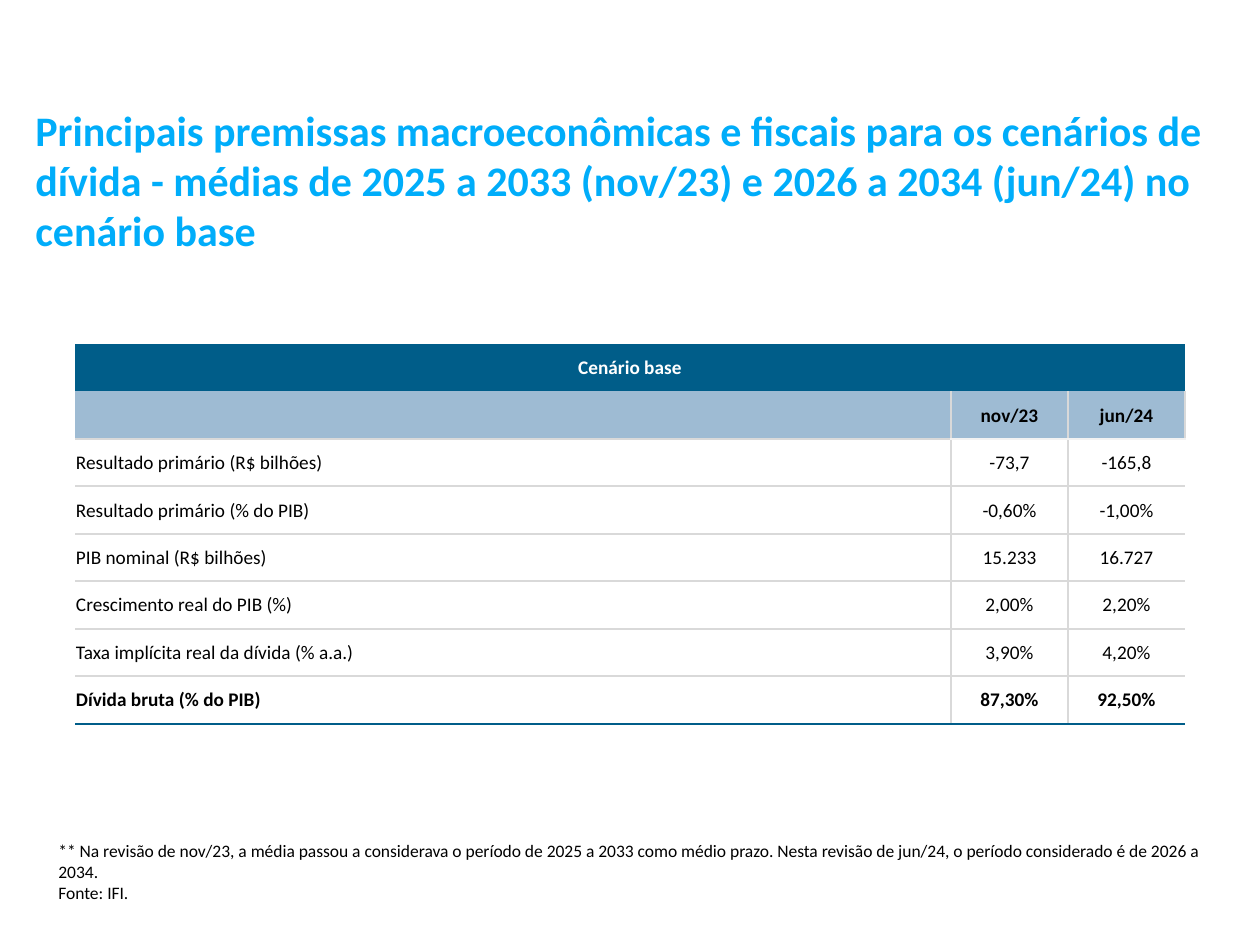
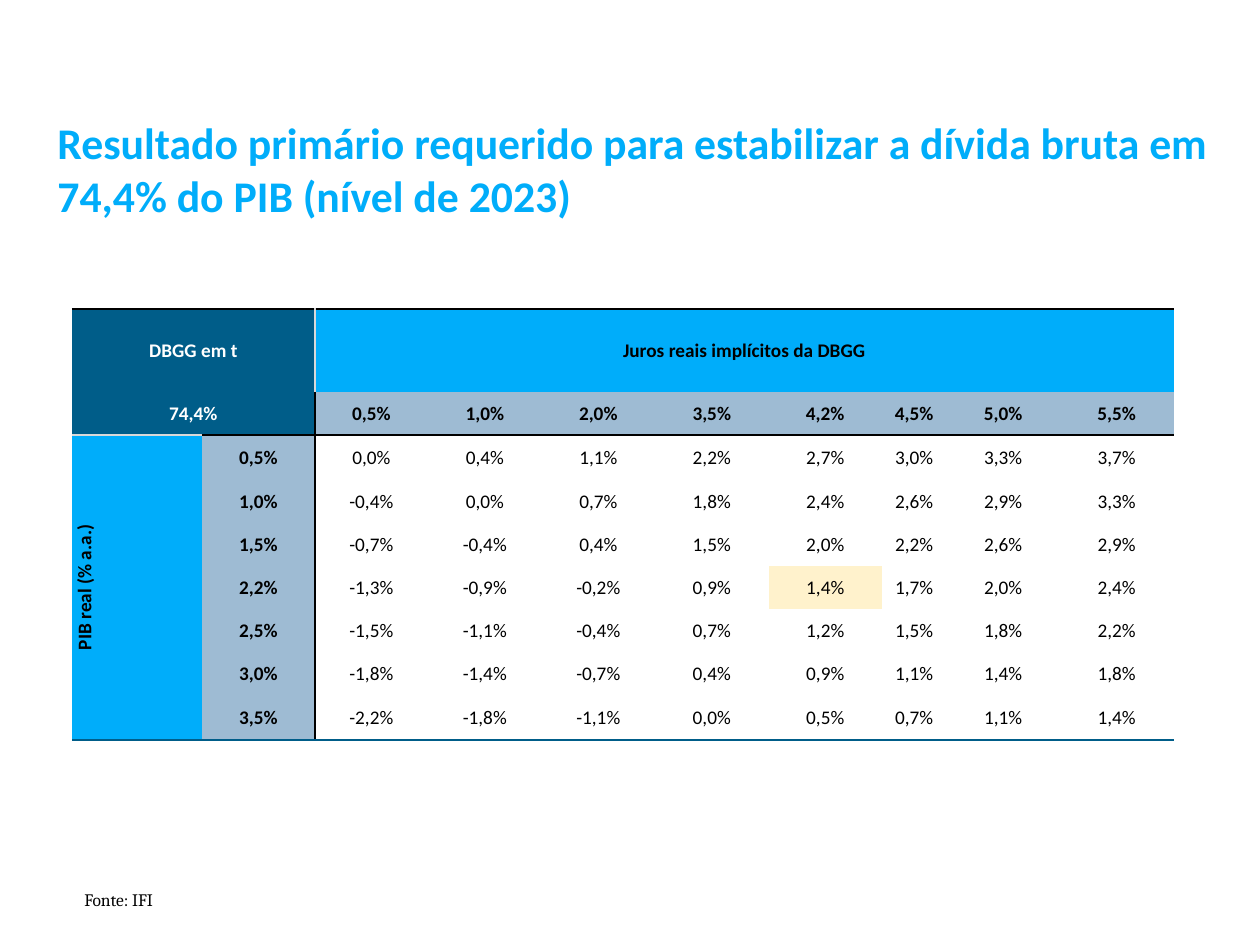
from dataclasses import dataclass
from typing import Callable, NamedTuple, Optional

from lxml.etree import SubElement
from pptx import Presentation
from pptx.dml.color import RGBColor
from pptx.enum.text import MSO_ANCHOR as Anchor, MSO_AUTO_SIZE as AutoSize, PP_ALIGN as Align
from pptx.oxml.ns import qn
from pptx.util import Emu, Pt

PX = 914400 / 126
NO_STYLE = "{2D5ABB26-0587-4C30-8999-92F81FD0307C}"
COLORS = {
    "sky": "00ADFA",
    "navy": "005D89",
    "pale": "9EBBD3",
    "cream": "FFF2CC",
    "gray": "D9D9D9",
    "mist": "F2F2F2",
    "black": "000000",
    "white": "FFFFFF",
}


class Edge(NamedTuple):
    color: str
    points: float = 1


class CellLook(NamedTuple):
    fill: Optional[str]
    bold: bool
    align: Align
    edges: dict[str, Edge]


class Merge(NamedTuple):
    row: int
    column: int
    last_row: int
    last_column: int


@dataclass
class TextBlock:
    left: int
    top: int
    width: int
    height: int
    lines: list[str]
    size: int = 10
    font: str = "Calibri"
    color: str = "black"
    bold: bool = False


@dataclass
class Grid:
    left: int
    top: int
    columns: list[int]
    rows: list[int]
    texts: list[list[str]]
    merges: list[Merge]
    look: Callable[[int, int], CellLook]
    vertical: Optional[tuple[int, int]] = None


GRAY = Edge("gray")
MIST = Edge("mist")
BLACK = Edge("black")
CLOSING = Edge("navy", 1.5)


def px(length: int) -> Emu:
    return Emu(round(length * PX))


def rgb(name: str) -> RGBColor:
    return RGBColor.from_string(COLORS[name])


def format_spans(para, size: int, font: str, color: str, bold: bool) -> None:
    for span in para.runs:
        span.font.size = Pt(size)
        span.font.name = font
        span.font.bold = bold
        span.font.color.rgb = rgb(color)


def title(left: int, top: int, width: int, height: int, text: str, size: int) -> TextBlock:
    return TextBlock(left, top, width, height, [text], size, color="sky", bold=True)


def draw_text(page, block: TextBlock) -> None:
    box = page.shapes.add_textbox(
        px(block.left), px(block.top), px(block.width), px(block.height))
    frame = box.text_frame
    frame.word_wrap = True
    frame.auto_size = AutoSize.SHAPE_TO_FIT_TEXT
    frame.text = "\n".join(block.lines)
    for para in frame.paragraphs:
        format_spans(para, block.size, block.font, block.color, block.bold)


def draw_edges(cell, edges: dict[str, Edge]) -> None:
    properties = cell._tc.get_or_add_tcPr()
    for index, side in enumerate("LRTB"):
        edge = edges.get(side)
        line = SubElement(properties, qn(f"a:ln{side}"))
        properties.insert(index, line)
        if edge:
            line.set("w", str(Pt(edge.points)))
            solid = SubElement(line, qn("a:solidFill"))
            SubElement(solid, qn("a:srgbClr")).set("val", COLORS[edge.color])
        else:
            SubElement(line, qn("a:noFill"))


def draw_cell(cell, text: str, look: CellLook) -> None:
    cell.margin_left = cell.margin_right = cell.margin_top = px(1)
    cell.margin_bottom = 0
    cell.vertical_anchor = Anchor.MIDDLE
    if look.fill:
        cell.fill.solid()
        cell.fill.fore_color.rgb = rgb(look.fill)
    else:
        cell.fill.background()
    draw_edges(cell, look.edges)
    if text:
        cell.text_frame.text = text
        para = cell.text_frame.paragraphs[0]
        para.alignment = look.align
        color = "white" if look.fill == "navy" else "black"
        format_spans(para, 11, "Calibri", color, look.bold)


def draw_grid(page, grid: Grid) -> None:
    holder = page.shapes.add_table(
        len(grid.rows), len(grid.columns), px(grid.left), px(grid.top),
        px(sum(grid.columns)), px(sum(grid.rows)))
    holder.element.find(".//" + qn("a:tableStyleId")).text = NO_STYLE
    table = holder.table
    table.first_row = table.horz_banding = False
    for column, width in zip(table.columns, grid.columns):
        column.width = px(width)
    for row, height in zip(table.rows, grid.rows):
        row.height = px(height)
    for r, texts in enumerate(grid.texts):
        for c, text in enumerate(texts):
            draw_cell(table.cell(r, c), text, grid.look(r, c))
    for merge in grid.merges:
        table.cell(merge.row, merge.column).merge(
            table.cell(merge.last_row, merge.last_column))
    if grid.vertical:
        table.cell(*grid.vertical)._tc.get_or_add_tcPr().set("vert", "vert270")


def premise_look(row: int, column: int) -> CellLook:
    edges = {}
    if row > 0:
        edges["B"] = CLOSING if row == 7 else MIST if row == 1 and column else GRAY
        if row > 1:
            edges["T"] = MIST if row == 2 and column else GRAY
        if column > 0:
            edges["L"] = GRAY
        if column < 2 or row == 1:
            edges["R"] = GRAY
    fill = {0: "navy", 1: "pale"}.get(row)
    align = Align.LEFT if column == 0 and row > 1 else Align.CENTER
    return CellLook(fill, row in (0, 1, 7), align, edges)


def required_look(row: int, column: int) -> CellLook:
    edges = {}
    if row == 0:
        edges["T"] = BLACK
    if row in (1, 2):
        edges["B" if row == 1 else "T"] = BLACK if column else GRAY
    if column in (1, 2):
        edges["R" if column == 1 else "L"] = BLACK if row else GRAY
    if row == 8 or (row, column) == (2, 0):
        edges["B"] = CLOSING
    if row < 2 and column < 2:
        fill = "navy"
    elif row == 0 or column == 0:
        fill = "sky"
    elif row == 1 or column == 1:
        fill = "pale"
    else:
        fill = "cream" if (row, column) == (5, 6) else None
    return CellLook(fill, row < 2 or column < 2, Align.CENTER, edges)


PREMISES = Grid(
    75, 344, [876, 117, 117], [47, 48] * 4,
    [
        ["Cenário base", "", ""],
        ["", "nov/23", "jun/24"],
        ["Resultado primário (R$ bilhões)", "-73,7", "-165,8"],
        ["Resultado primário (% do PIB)", "-0,60%", "-1,00%"],
        ["PIB nominal (R$ bilhões)", "15.233", "16.727"],
        ["Crescimento real do PIB (%)", "2,00%", "2,20%"],
        ["Taxa implícita real da dívida (% a.a.)", "3,90%", "4,20%"],
        ["Dívida bruta (% do PIB)", "87,30%", "92,50%"],
    ],
    [Merge(0, 0, 0, 2)], premise_look)

REQUIRED_RESULTS = [
    "0,5% 0,0% 0,4% 1,1% 2,2% 2,7% 3,0% 3,3% 3,7%",
    "1,0% -0,4% 0,0% 0,7% 1,8% 2,4% 2,6% 2,9% 3,3%",
    "1,5% -0,7% -0,4% 0,4% 1,5% 2,0% 2,2% 2,6% 2,9%",
    "2,2% -1,3% -0,9% -0,2% 0,9% 1,4% 1,7% 2,0% 2,4%",
    "2,5% -1,5% -1,1% -0,4% 0,7% 1,2% 1,5% 1,8% 2,2%",
    "3,0% -1,8% -1,4% -0,7% 0,4% 0,9% 1,1% 1,4% 1,8%",
    "3,5% -2,2% -1,8% -1,1% 0,0% 0,5% 0,7% 1,1% 1,4%",
]

REQUIRED = Grid(
    72, 309, [130, 113, 113, 114, 113, 114, 113, 65, 113, 114],
    [83, 43, 45, *[43] * 5, 45],
    [
        ["DBGG em t", "", "Juros reais implícitos da DBGG", *[""] * 7],
        ["74,4%", "", *"0,5% 1,0% 2,0% 3,5% 4,2% 4,5% 5,0% 5,5%".split()],
        *[["" if index else "PIB real (% a.a.)", *line.split()]
          for index, line in enumerate(REQUIRED_RESULTS)],
    ],
    [Merge(0, 0, 0, 1), Merge(0, 2, 0, 9), Merge(1, 0, 1, 1), Merge(2, 0, 8, 0)],
    required_look, vertical=(2, 0))

PAGES = [
    (
        title(23, 98, 1221, 165,
              "Principais premissas macroeconômicas e fiscais para os cenários de dívida - "
              "médias de 2025 a 2033 (nov/23) e 2026 a 2034 (jun/24) no cenário base", 24),
        PREMISES,
        TextBlock(46, 834, 1168, 77, [
            "** Na revisão de nov/23, a média passou a considerava o período de 2025 a 2033 "
            "como médio prazo. Nesta revisão de jun/24, o período considerado é de 2026 a 2034.",
            "Fonte: IFI.",
        ]),
    ),
    (
        title(45, 110, 1181, 118,
              "Resultado primário requerido para estabilizar a dívida bruta em 74,4% do PIB "
              "(nível de 2023)", 25),
        REQUIRED,
        TextBlock(72, 883, 1045, 34, ["Fonte: IFI"], font="Cambria"),
    ),
]


def main() -> None:
    deck = Presentation()
    deck.slide_width, deck.slide_height = px(1260), px(945)
    for heading, grid, source in PAGES:
        page = deck.slides.add_slide(deck.slide_layouts[6])
        draw_text(page, heading)
        draw_grid(page, grid)
        draw_text(page, source)
    deck.save("out.pptx")


if __name__ == "__main__":
    main()
